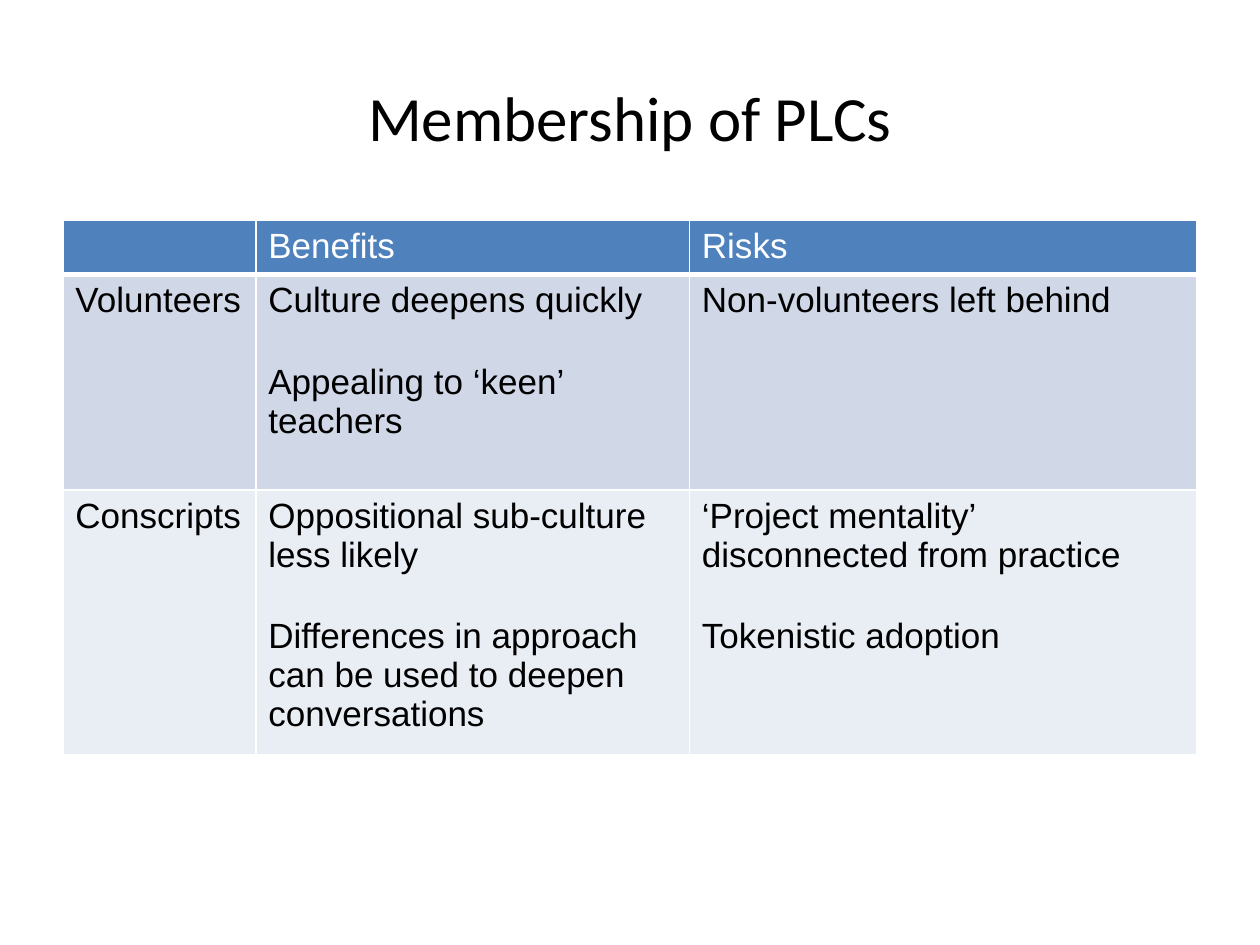
from lxml.etree import SubElement
from pptx import Presentation
from pptx.dml.color import RGBColor
from pptx.enum.text import MSO_ANCHOR, PP_ALIGN
from pptx.oxml.ns import qn
from pptx.util import Cm, Pt


def colour(value):
    return RGBColor.from_string(value)


def add_border(cell, side, points):
    line = SubElement(cell._tc.get_or_add_tcPr(), qn(f"a:{side}"), w=str(Pt(points)))
    fill = SubElement(line, qn("a:solidFill"))
    SubElement(fill, qn("a:srgbClr"), val="FFFFFF")


deck = Presentation()
deck.slide_width, deck.slide_height = Cm(25.4), Cm(19.05)
page = deck.slides.add_slide(deck.slide_layouts[5])

title = page.shapes.title
title_place = {"left": 1.27, "top": 0.76, "width": 22.86, "height": 3.18}
for name, value in title_place.items():
    setattr(title, name, Cm(value))
title.text_frame.text = "Membership of PLCs"
title.text_frame.vertical_anchor = MSO_ANCHOR.MIDDLE
title_paragraph = title.text_frame.paragraphs[0]
title_paragraph.alignment = PP_ALIGN.CENTER
title_format = {"name": "Calibri", "size": Pt(36), "bold": False}
for name, value in title_format.items():
    setattr(title_paragraph.font, name, value)
title_paragraph.font.color.rgb = colour("000000")

rows = [
    [[], ["Benefits"], ["Risks"]],
    [
        ["Volunteers"],
        ["Culture deepens quickly", "Appealing to ‘keen’ teachers"],
        ["Non-volunteers left behind"],
    ],
    [
        ["Conscripts"],
        [
            "Oppositional sub-culture less likely",
            "Differences in approach can be used to deepen conversations",
        ],
        ["‘Project mentality’ disconnected from practice", "Tokenistic adoption"],
    ],
]
column_widths = [3.89, 8.74, 10.23]
row_heights = [1.09, 4.34, 5.33]
row_fills = ["4F81BD", "D0D8E8", "E9EDF4"]
text_colours = ["FFFFFF", "000000", "000000"]
cell_format = {"name": "Arial", "size": Pt(20), "bold": False}
cell_margins = {
    "margin_left": Cm(0.25),
    "margin_right": Cm(0.25),
    "margin_top": Cm(0.13),
    "margin_bottom": Cm(0.13),
}

frame = page.shapes.add_table(
    len(rows), len(column_widths),
    Cm(1.27), Cm(4.45), Cm(sum(column_widths)), Cm(sum(row_heights)),
)
table = frame.table
for column, width in zip(table.columns, column_widths):
    column.width = Cm(width)
for row, height in zip(table.rows, row_heights):
    row.height = Cm(height)

for row_index, row in enumerate(rows):
    for column_index, texts in enumerate(row):
        cell = table.cell(row_index, column_index)
        for side in ("lnL", "lnR", "lnT", "lnB"):
            add_border(cell, side, 3 if row_index == 0 and side == "lnB" else 1)
        cell.fill.solid()
        cell.fill.fore_color.rgb = colour(row_fills[row_index])
        for name, value in cell_margins.items():
            setattr(cell, name, value)
        for text_index, text in enumerate(texts):
            if text_index == 0:
                para = cell.text_frame.paragraphs[0]
            else:
                para = cell.text_frame.add_paragraph()
                para.space_before = Pt(24)
            span = para.add_run()
            span.text = text
            for name, value in cell_format.items():
                setattr(span.font, name, value)
            span.font.color.rgb = colour(text_colours[row_index])

deck.save("out.pptx")
